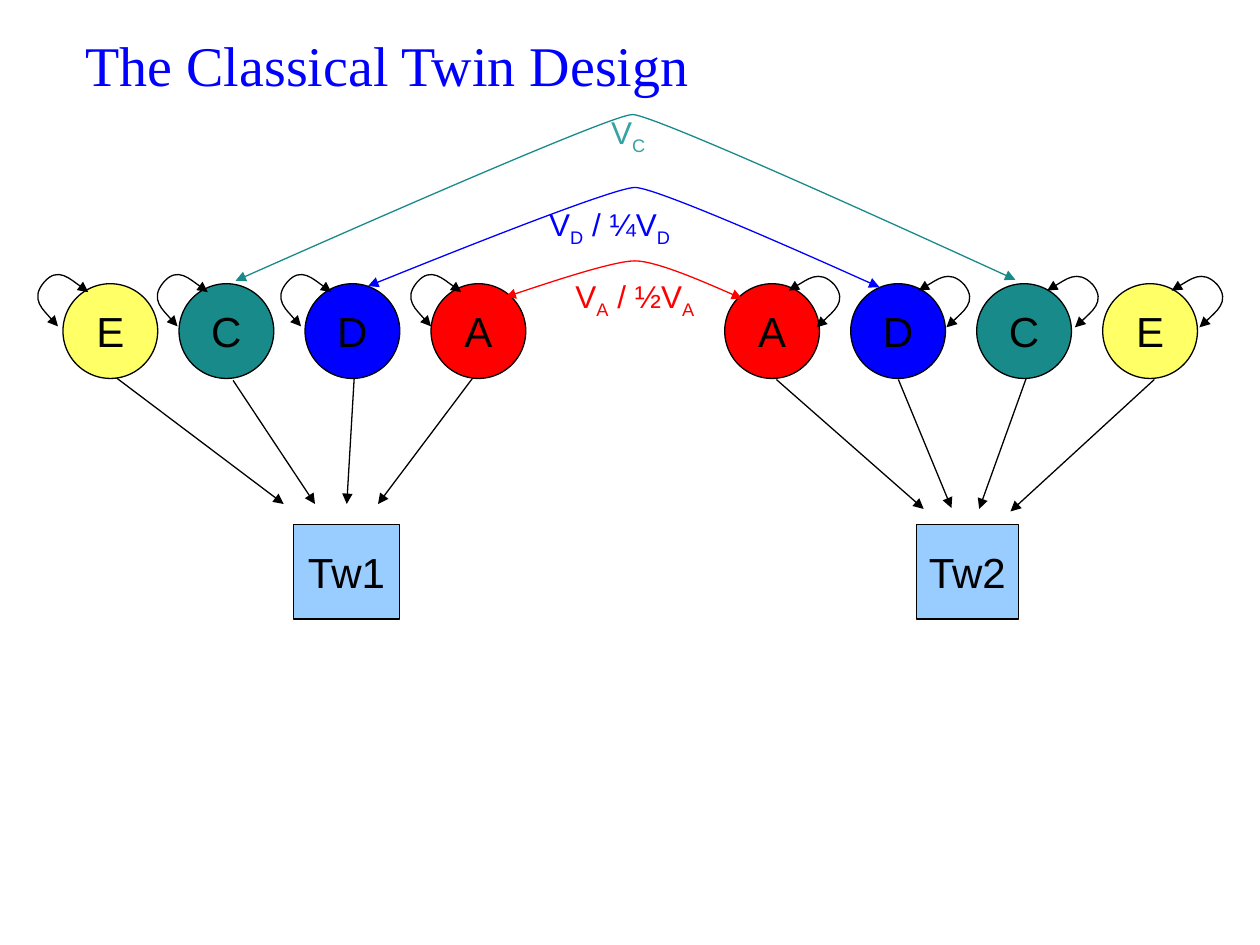
"""Build the classical twin design path diagram."""
from lxml.etree import SubElement
from pptx import Presentation
from pptx.dml.color import RGBColor
from pptx.enum.shapes import MSO_CONNECTOR, MSO_SHAPE
from pptx.enum.text import MSO_ANCHOR, PP_ALIGN
from pptx.oxml.ns import qn
from pptx.util import Cm, Pt

BLACK = RGBColor(0x00, 0x00, 0x00)
BLUE = RGBColor(0x00, 0x00, 0xFF)
RED = RGBColor(0xFF, 0x00, 0x00)
TEAL = RGBColor(0x19, 0x8A, 0x8A)
LIGHT_TEAL = RGBColor(0x33, 0xA3, 0xA3)
YELLOW = RGBColor(0xFF, 0xFF, 0x66)
SKY = RGBColor(0x99, 0xCC, 0xFF)

SIZE = 1.91
FACTOR_TOP = 5.72
FACTORS = {"E": YELLOW, "C": TEAL, "D": BLUE, "A": RED}
LEFT_LOOP = [(0, 0), (0, 0), (-0.61, -0.53), (-0.89, -0.2),
             (-1.19, 0.15), (-0.61, 0.69), (-0.61, 0.69)]
RIGHT_LOOP = [(0, 0), (0, 0), (0.64, -0.51), (0.36, -0.86),
              (0.05, -1.19), (-0.56, -0.74), (-0.56, -0.74)]

# Each twin: factor order, circle lefts, loop starts, loop top, loop shape
TWINS = [
    ("ECDA", [1.27, 3.61, 6.15, 8.69], [1.78, 4.19, 6.68, 9.3], 5.89, LEFT_LOOP),
    ("ADCE", [14.61, 17.15, 19.69, 22.23], [16.46, 19.08, 21.67, 24.18], 6.6, RIGHT_LOOP),
]
BOXES = [("Tw1", 5.92, 2.13), ("Tw2", 18.47, 2.06)]
PATHS = [
    ((9.53, 7.62), (7.62, 10.16)), ((7.14, 7.62), (6.99, 10.16)),
    ((4.7, 7.67), (6.35, 10.16)), ((2.31, 7.59), (5.72, 10.16)),
    ((15.65, 7.65), (18.62, 10.26)), ((18.11, 7.65), (19.18, 10.24)),
    ((20.7, 7.59), (19.74, 10.26)), ((23.27, 7.65), (20.37, 10.31)),
]
ARCS = [
    ((14.96, 6.02), (12.8, 5.26), (10.19, 5.99), RED),
    ((17.73, 5.79), (12.8, 3.78), (7.42, 5.77), BLUE),
    ((20.47, 5.64), (12.75, 2.31), (4.75, 5.66), TEAL),
]
LABELS = [
    (["V", "A", " / ½V", "A"], (11.35, 5.46, 3.35, 1.14), RED),
    (["V", "D", " / ¼V", "D"], (10.82, 4.01, 3.99, 1.02), BLUE),
    (["V", "C"], (12.07, 2.16, 1.42, 1.02), LIGHT_TEAL),
]


class Diagram:
    """Holds the style and the current slide."""

    font = "Arial"
    title_font = "Times New Roman"
    line_width = Pt(0.75)

    def __init__(self, slide):
        self.s = slide

    def style_run(self, r, size, color, font=None):
        r.font.size = Pt(size)
        r.font.name = font or self.font
        r.font.color.rgb = color

    def style_line(self, sp, color, ends=()):
        sp.line.color.rgb = color
        sp.line.width = self.line_width
        for end in ends:
            SubElement(sp.get_or_add_ln(), qn(f"a:{end}"), type="triangle")

    def title(self, text, left, top, width, height):
        sp = self.s.shapes.title
        sp.left, sp.top, sp.width, sp.height = map(Cm, (left, top, width, height))
        tf = sp.text_frame
        tf.text = text
        tf.word_wrap = True
        tf.vertical_anchor = MSO_ANCHOR.BOTTOM
        p = tf.paragraphs[0]
        p.alignment = PP_ALIGN.LEFT
        p.line_spacing = 0.98
        self.style_run(p.runs[0], 32, BLUE, self.title_font)

    def node(self, kind, text, left, top, width, fill):
        sp = self.s.shapes.add_shape(kind, Cm(left), Cm(top), Cm(width), Cm(SIZE))
        sp.shadow.inherit = False
        sp.fill.solid()
        sp.fill.fore_color.rgb = fill
        self.style_line(sp, BLACK)
        tf = sp.text_frame
        tf.text = text
        tf.word_wrap = False
        tf.vertical_anchor = MSO_ANCHOR.MIDDLE
        p = tf.paragraphs[0]
        p.alignment = PP_ALIGN.CENTER
        self.style_run(p.runs[0], 24, BLACK)
        return sp

    def arrow(self, start, end):
        sp = self.s.shapes.add_connector(MSO_CONNECTOR.STRAIGHT, *map(Cm, start + end))
        self.style_line(sp, BLACK, ["tailEnd"])
        SubElement(sp._element.spPr, qn("a:effectLst"))

    def curve(self, points, color):
        start, *rest = [(Cm(x), Cm(y)) for x, y in points]
        builder = self.s.shapes.build_freeform(*start)
        builder.add_line_segments(rest, close=False)
        sp = builder.convert_to_shape()
        route = sp._element.find(".//" + qn("a:path"))
        segments = route.findall(qn("a:lnTo"))
        for i in range(0, len(segments), 3):
            bezier = SubElement(route, qn("a:cubicBezTo"))
            for segment in segments[i:i + 3]:
                bezier.append(segment[0])
                route.remove(segment)
        sp.shadow.inherit = False
        sp.fill.background()
        self.style_line(sp, color, ["headEnd", "tailEnd"])

    def label(self, parts, box, color):
        tf = self.s.shapes.add_textbox(*map(Cm, box)).text_frame
        tf.word_wrap = True
        p = tf.paragraphs[0]
        for i, part in enumerate(parts):
            r = p.add_run()
            r.text = part
            self.style_run(r, 18, color)
            if i % 2:
                r._r.get_or_add_rPr().set("baseline", "-25000")


def main():
    prs = Presentation()
    prs.slide_width, prs.slide_height = Cm(25.4), Cm(19.05)
    d = Diagram(prs.slides.add_slide(prs.slide_layouts[5]))
    d.title("The Classical Twin Design", 1.47, 0.43, 22.66, 1.7)
    for text, left, width in BOXES:
        sp = d.node(MSO_SHAPE.ROUNDED_RECTANGLE, text, left, 10.57, width, SKY)
        sp.adjustments[0] = 0
    for start, end in PATHS:
        d.arrow(start, end)
    for names, lefts, *_ in TWINS:
        for name, left in zip(names, lefts):
            d.node(MSO_SHAPE.OVAL, name, left, FACTOR_TOP, SIZE, FACTORS[name])
    for _, _, starts, top, loop in TWINS:
        for x in starts:
            d.curve([(x + dx, top + dy) for dx, dy in loop], BLACK)
    for right, (x, y), left, color in ARCS:
        d.curve([right, right, (x + 0.46, y), (x, y), (x - 0.46, y), left, left], color)
    for parts, box, color in LABELS:
        d.label(parts, box, color)
    prs.save("out.pptx")


if __name__ == "__main__":
    main()
